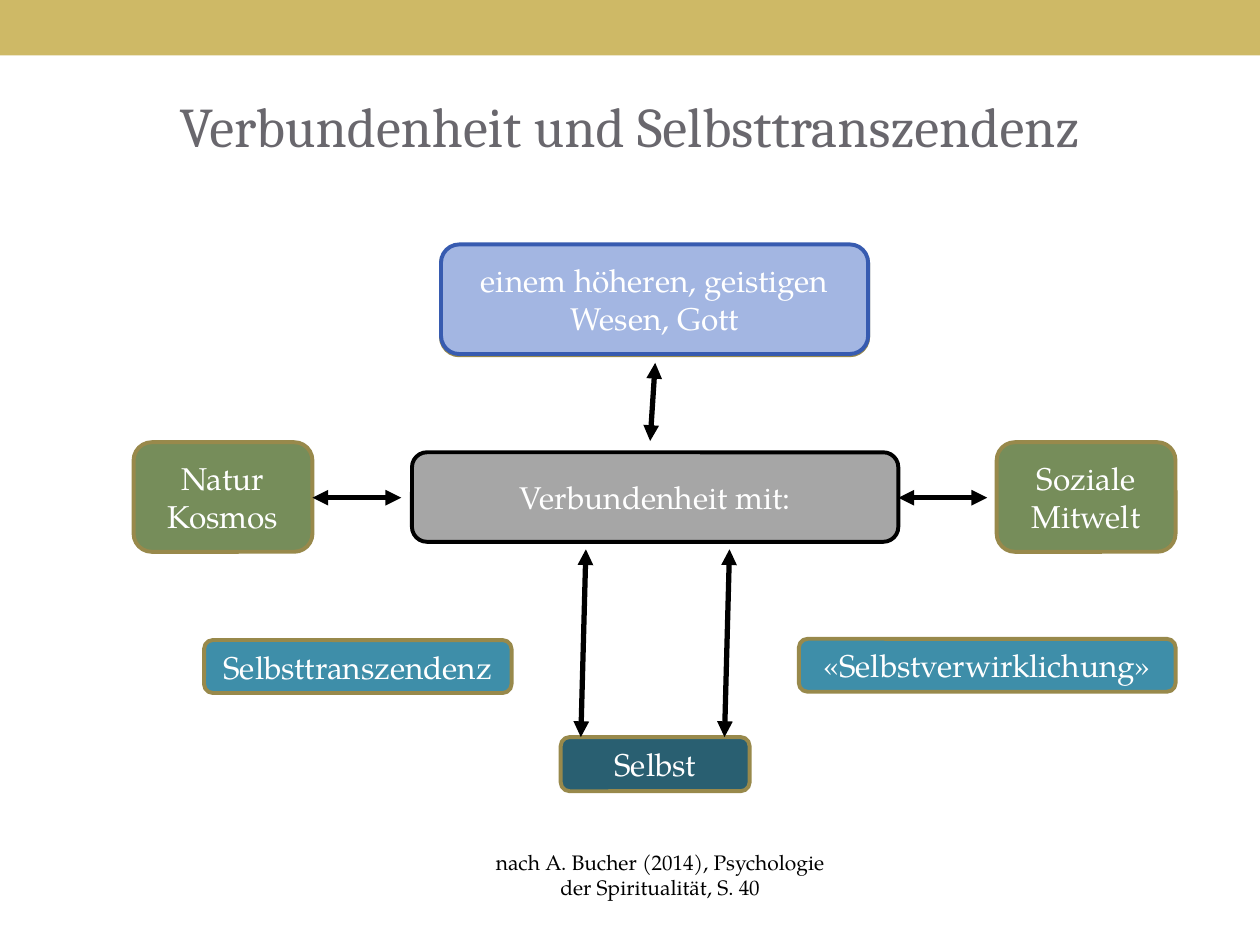
from typing import NamedTuple
from lxml.etree import SubElement as Sub
from pptx import Presentation
from pptx.dml.color import RGBColor
from pptx.enum.shapes import MSO_CONNECTOR as Conn, MSO_SHAPE as Kind
from pptx.enum.text import MSO_ANCHOR as Anchor, PP_ALIGN as Align
from pptx.oxml.ns import qn
from pptx.util import Inches, Pt

WIDE, HIGH = Inches(10), Inches(7.5)
SERIF, BODY = "Cambria", "TeX Gyre Pagella"
GOLD, GREEN, TEAL = "98894B", "768D5A", "3E8EA9"
WHITE, BLACK = "FFFFFF", "000000"


class Area(NamedTuple):
    """Left, top, width and height in percent of the slide."""
    x: float
    y: float
    w: float
    h: float


class Box(NamedTuple):
    area: Area
    fill: str
    text: str = ""
    edge: str = GOLD


class Arrow(NamedTuple):
    """Both ends in percent of the slide."""
    x1: float
    y1: float
    x2: float
    y2: float


SIDE_Y, SIDE_W, TALL = 46.8, 14.2, 11.6
MID_Y = 52.67
BOXES = [
    Box(Area(32.7, 47.87, 38.6, 9.47), "A6A6A6", "Verbundenheit mit:", BLACK),
    Box(Area(10.6, SIDE_Y, SIDE_W, TALL), GREEN, "Natur\nKosmos"),
    Box(Area(79.1, SIDE_Y, SIDE_W, TALL), GREEN, "Soziale\nMitwelt"),
    Box(Area(35, 26, 33.9, TALL), GREEN),
    Box(Area(35, 25.87, 33.9, TALL), "A3B6E2",
        "einem höheren, geistigen\nWesen, Gott", "375BB0"),
    Box(Area(44.5, 78, 15, 5.73), "295F71", "Selbst"),
    Box(Area(16.2, 67.73, 24.4, 5.6), TEAL, "Selbsttranszendenz"),
    Box(Area(63.4, 67.6, 29.9, 5.6), TEAL, "«Selbstverwirklichung»"),
]
ARROWS = [Arrow(52, 38.4, 51.6, 46.67)]
ARROWS += [Arrow(x, 58.13, x - 0.4, 78) for x in (46.5, 57.9)]
ARROWS += [Arrow(x, MID_Y, x + 7.05, MID_Y) for x in (71.3, 24.8)]


def tint(code: str) -> RGBColor:
    return RGBColor.from_string(code)


def across(share: float) -> int:
    return round(WIDE * share / 100)


def down(share: float) -> int:
    return round(HIGH * share / 100)


def place(area: Area) -> tuple:
    return across(area.x), down(area.y), across(area.w), down(area.h)


def write(frame, text: str, size: float, name: str, color: str) -> None:
    frame.text = text
    frame.word_wrap = True
    look = {"size": Pt(size), "name": name, "bold": False}
    for para in frame.paragraphs:
        para.alignment = Align.CENTER
        for key, value in look.items():
            setattr(para.font, key, value)
        para.font.color.rgb = tint(color)


def draw_bar(slide, area: Area, fill: str) -> None:
    bar = slide.shapes.add_shape(Kind.RECTANGLE, *place(area))
    bar.shadow.inherit = False
    bar.fill.solid()
    bar.fill.fore_color.rgb = tint(fill)
    bar.line.fill.background()


def draw_box(slide, box: Box) -> None:
    shape = slide.shapes.add_shape(Kind.ROUNDED_RECTANGLE, *place(box.area))
    shape.shadow.inherit = False
    shape.fill.solid()
    shape.fill.fore_color.rgb = tint(box.fill)
    shape.line.color.rgb = tint(box.edge)
    shape.line.width = Pt(2.25)
    if box.text:
        shape.text_frame.vertical_anchor = Anchor.MIDDLE
        write(shape.text_frame, box.text, 18, BODY, WHITE)


def draw_arrow(slide, arrow: Arrow) -> None:
    line = slide.shapes.add_connector(
        Conn.STRAIGHT, across(arrow.x1), down(arrow.y1),
        across(arrow.x2), down(arrow.y2))
    line.line.color.rgb = tint(BLACK)
    line.line.width = Pt(3)
    edge = line.line._get_or_add_ln()
    for end in ("a:headEnd", "a:tailEnd"):
        Sub(edge, qn(end), type="triangle")
    Sub(line._element.spPr, qn("a:effectLst"))


def main() -> None:
    deck = Presentation()
    deck.slide_width, deck.slide_height = WIDE, HIGH
    slide = deck.slides.add_slide(deck.slide_layouts[5])

    draw_bar(slide, Area(0, 0, 100, 5.87), "CEB966")
    title = slide.shapes.title
    spot = place(Area(5, 4.8, 90, 16.8))
    for key, value in zip(("left", "top", "width", "height"), spot):
        setattr(title, key, value)
    title.text_frame.vertical_anchor = Anchor.MIDDLE
    write(title.text_frame, "Verbundenheit und Selbsttranszendenz",
          32, SERIF, "69676D")

    for box in BOXES:
        draw_box(slide, box)
    for arrow in ARROWS:
        draw_arrow(slide, arrow)

    source = slide.shapes.add_textbox(*place(Area(37.4, 89.2, 30, 6.67)))
    write(source.text_frame,
          "nach A. Bucher (2014), Psychologie der Spiritualität, S. 40",
          12, BODY, BLACK)
    deck.save("out.pptx")


if __name__ == "__main__":
    main()
